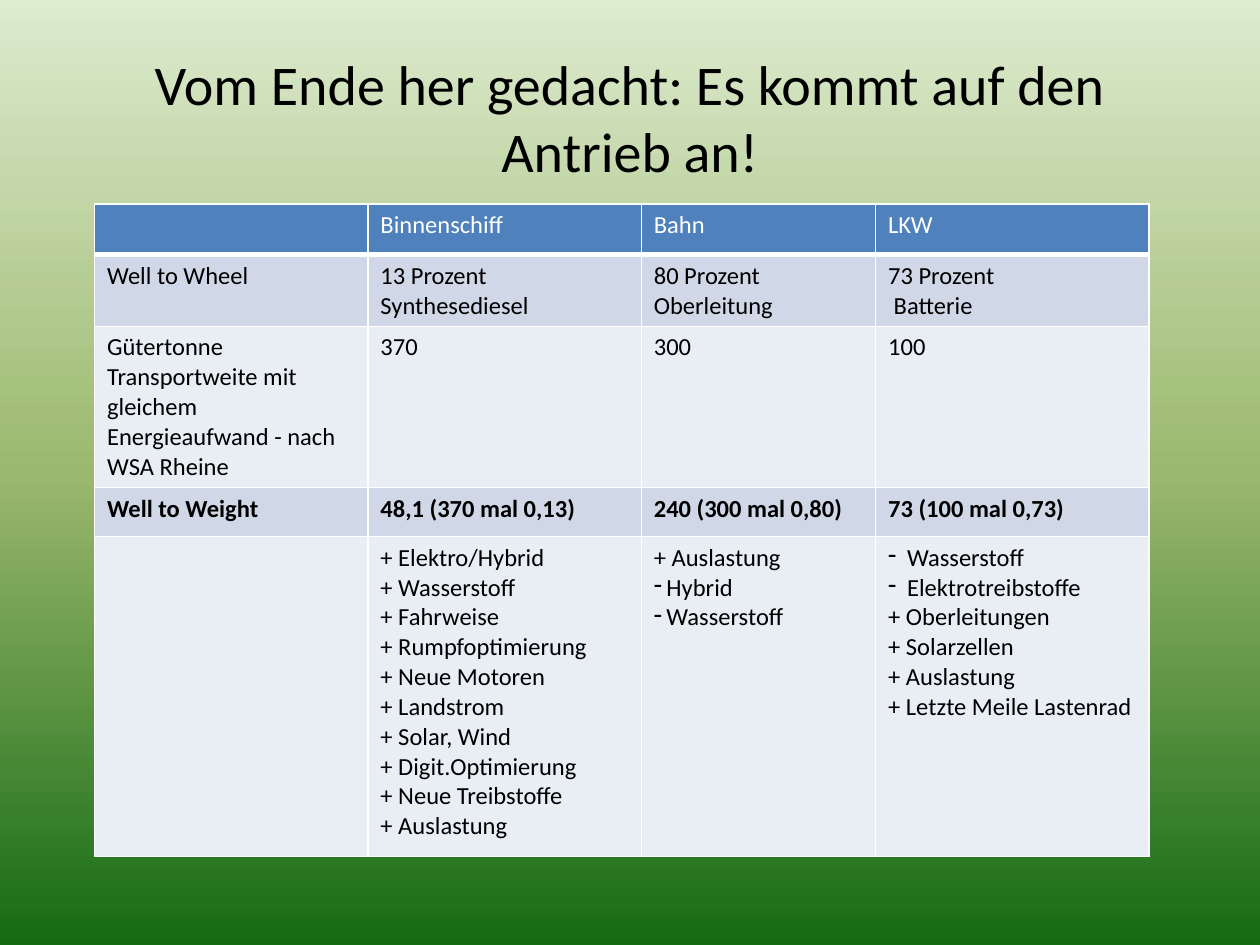
from lxml import etree
from pptx import Presentation
from pptx.dml.color import RGBColor
from pptx.enum.text import MSO_ANCHOR, PP_ALIGN
from pptx.oxml.ns import qn
from pptx.util import Inches, Pt

CENTER = PP_ALIGN.CENTER
MIDDLE = MSO_ANCHOR.MIDDLE
FONT = "Calibri"
BLACK, WHITE = "000000", "FFFFFF"
HEADER_FILL = "4F81BD"
BAND_FILLS = ["E9EDF4", "D0D8E8"]
BACKGROUND_STOPS = [(0, "DDEBCF"), (50, "9CB86E"), (100, "156B13")]
COLUMN_WIDTHS = [2.17, 2.17, 1.86, 2.17]
ROW_HEIGHTS = [0.39, 0.57, 1.28, 0.39, 2.54]
DASH_INDENTS = [0, 0, 0.1, 0.15]
BOLD_ROW = 3
ROWS = [
    ["", "Binnenschiff", "Bahn", "LKW"],
    ["Well to Wheel", "13 Prozent\nSynthesediesel", "80 Prozent\nOberleitung",
     "73 Prozent\v Batterie"],
    ["Gütertonne Transportweite mit gleichem Energieaufwand - nach WSA Rheine",
     "370", "300", "100"],
    ["Well to Weight", "48,1 (370 mal 0,13)", "240 (300 mal 0,80)", "73 (100 mal 0,73)"],
    ["",
     "+ Elektro/Hybrid\n+ Wasserstoff\n+ Fahrweise\n+ Rumpfoptimierung\n+ Neue Motoren\n"
     "+ Landstrom\n+ Solar, Wind\n+ Digit.Optimierung\n+ Neue Treibstoffe\n+ Auslastung",
     "+ Auslastung\n- Hybrid\n- Wasserstoff",
     "- Wasserstoff\n- Elektrotreibstoffe\n+ Oberleitungen\n+ Solarzellen\n"
     "+ Auslastung\n+ Letzte Meile Lastenrad"],
]


def rgb(color):
    return RGBColor.from_string(color)


def sub(parent, tag, **attrs):
    return etree.SubElement(parent, qn(tag), attrs)


def style_font(font, size, color, bold=False):
    font.name = FONT
    font.size = Pt(size)
    font.bold = bold
    font.color.rgb = rgb(color)


def set_background(s):
    fill = s.background.fill
    fill.gradient()
    fill.gradient_angle = 270
    stops = s.background._cSld.find(".//" + qn("a:gsLst"))
    for stop in list(stops):
        stops.remove(stop)
    for position, color in BACKGROUND_STOPS:
        stop = sub(stops, "a:gs", pos=str(position * 1000))
        sub(stop, "a:srgbClr", val=color)


def add_title(s, text):
    box = s.shapes.add_textbox(Inches(0.5), Inches(0.3), Inches(9), Inches(1.25))
    tf = box.text_frame
    tf.word_wrap = True
    tf.vertical_anchor = MIDDLE
    tf.text = text
    p = tf.paragraphs[0]
    p.alignment = CENTER
    style_font(p.runs[0].font, 32, BLACK)


def set_borders(cell, bottom_width):
    tcPr = cell._tc.get_or_add_tcPr()
    widths = {"a:lnL": 1, "a:lnR": 1, "a:lnT": 1, "a:lnB": bottom_width}
    for i, (tag, width) in enumerate(widths.items()):
        line = sub(tcPr, tag, w=str(Pt(width)))
        sub(sub(line, "a:solidFill"), "a:srgbClr", val=WHITE)
        tcPr.insert(i, line)


def add_dash(p, indent):
    p.runs[0].text = p.runs[0].text.removeprefix("- ")
    pPr = p._p.get_or_add_pPr()
    pPr.set("marL", str(Inches(indent)))
    pPr.set("indent", str(-Inches(indent)))
    sub(pPr, "a:buFontTx")
    sub(pPr, "a:buChar", char="-")


def fill_cell(cell, text, row, dash_indent):
    header = row == 0
    cell.fill.solid()
    cell.fill.fore_color.rgb = rgb(HEADER_FILL if header else BAND_FILLS[row % 2])
    set_borders(cell, 3 if header else 1)
    cell.text_frame.text = text
    for p in cell.text_frame.paragraphs:
        if p.text.startswith("- "):
            add_dash(p, dash_indent)
        for r in p.runs:
            style_font(r.font, 14, WHITE if header else BLACK, row == BOLD_ROW)


def add_comparison_table(s):
    frame = s.shapes.add_table(
        len(ROWS), len(COLUMN_WIDTHS), Inches(0.75), Inches(1.62),
        Inches(sum(COLUMN_WIDTHS)), Inches(sum(ROW_HEIGHTS)))
    table = frame.table
    for column, width in zip(table.columns, COLUMN_WIDTHS):
        column.width = Inches(width)
    for row, height in zip(table.rows, ROW_HEIGHTS):
        row.height = Inches(height)
    for i, texts in enumerate(ROWS):
        for j, text in enumerate(texts):
            fill_cell(table.cell(i, j), text, i, DASH_INDENTS[j])


def main():
    prs = Presentation()
    prs.slide_width = Inches(10)
    prs.slide_height = Inches(7.5)
    s = prs.slides.add_slide(prs.slide_layouts[6])
    set_background(s)
    add_title(s, "Vom Ende her gedacht: Es kommt auf den Antrieb an!")
    add_comparison_table(s)
    prs.save("out.pptx")


if __name__ == "__main__":
    main()
